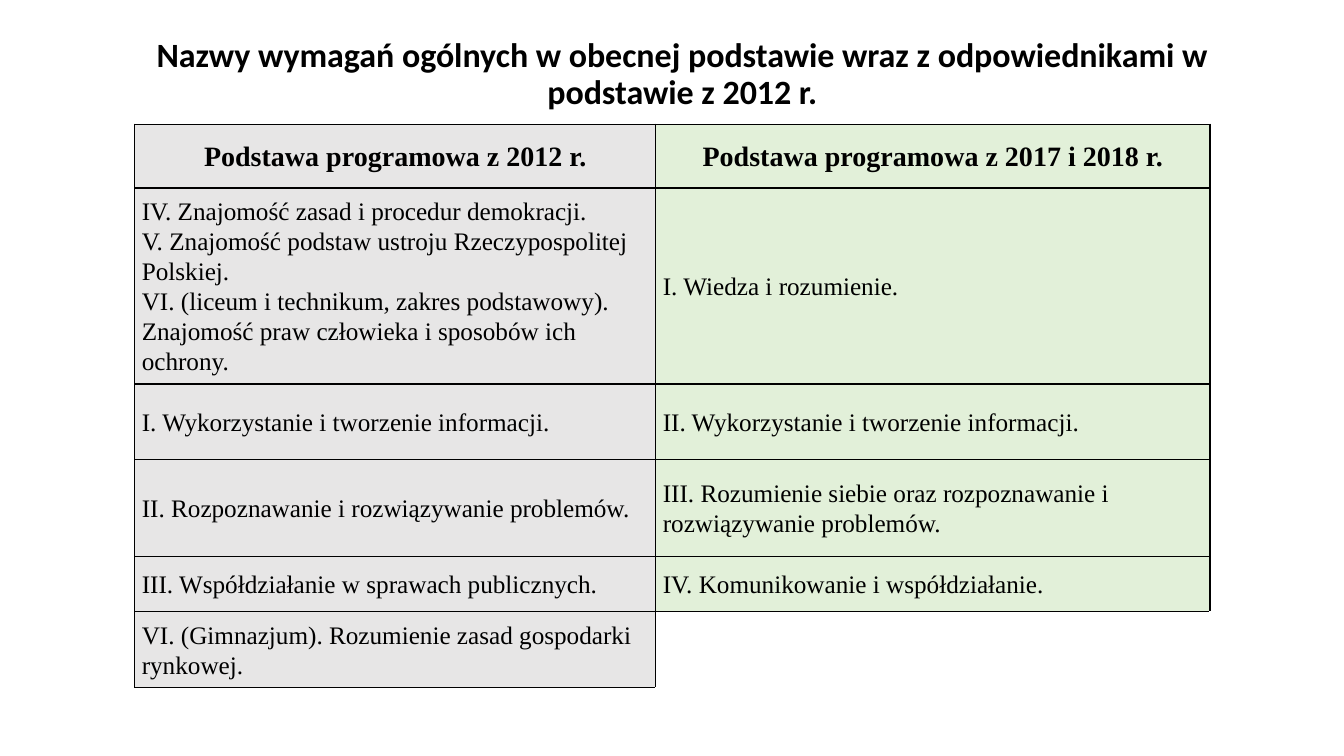
"""Build a slide comparing general requirements in two versions of a curriculum."""
from lxml import etree
from pptx import Presentation
from pptx.dml.color import RGBColor
from pptx.enum import text
from pptx.oxml import ns
from pptx.util import Pt

BLACK = RGBColor(0, 0, 0)
GREY = RGBColor(0xE7, 0xE6, 0xE6)
GREEN = RGBColor(0xE2, 0xF0, 0xD9)

TITLE = ("Nazwy wymagań ogólnych w obecnej podstawie wraz z odpowiednikami "
         "w podstawie z 2012 r.")
COLUMN_WIDTHS = (372.2, 395.8)
ROWS = (
    (45.5, "Podstawa programowa z 2012 r.", "Podstawa programowa z 2017 i 2018 r."),
    (140, "IV. Znajomość zasad i procedur demokracji.\n"
          "V. Znajomość podstaw ustroju Rzeczypospolitej Polskiej.\n"
          "VI. (liceum i technikum, zakres podstawowy). "
          "Znajomość praw człowieka i sposobów ich ochrony.",
     "I. Wiedza i rozumienie."),
    (54, "I. Wykorzystanie i tworzenie informacji.",
     "II. Wykorzystanie i tworzenie informacji."),
    (69.5, "II. Rozpoznawanie i rozwiązywanie problemów.",
     "III. Rozumienie siebie oraz rozpoznawanie i rozwiązywanie problemów."),
    (39.3, "III. Współdziałanie w sprawach publicznych.",
     "IV. Komunikowanie i współdziałanie."),
    (54, "VI. (Gimnazjum). Rozumienie zasad gospodarki rynkowej.", ""),
)


def format_text(frame, font_name, size, bold, spacing, alignment):
    for para in frame.paragraphs:
        para.alignment = alignment
        para.line_spacing = spacing
        for span in para.runs:
            span.font.name = font_name
            span.font.size = Pt(size)
            span.font.bold = bold
            span.font.color.rgb = BLACK


def add_borders(cell, sides):
    properties = cell._tc.get_or_add_tcPr()
    for position, side in enumerate(sides):
        line = etree.Element(ns.qn(f"a:ln{side}"), w=str(Pt(1)))
        fill = etree.SubElement(line, ns.qn("a:solidFill"))
        etree.SubElement(fill, ns.qn("a:srgbClr"), val=str(BLACK))
        properties.insert(position, line)


deck = Presentation()
deck.slide_width, deck.slide_height = Pt(960), Pt(540)
page = deck.slides.add_slide(deck.slide_layouts[5])

title = page.shapes.title
title.left, title.top, title.width, title.height = Pt(73.4), Pt(23.5), Pt(828), Pt(60)
title.text_frame.text = TITLE
title.text_frame.word_wrap = True
title.text_frame.auto_size = text.MSO_AUTO_SIZE.NONE
title.text_frame.vertical_anchor = text.MSO_ANCHOR.MIDDLE
format_text(title.text_frame, "Calibri", 24.3, True, 0.9, text.PP_ALIGN.CENTER)

table = page.shapes.add_table(len(ROWS), 2, Pt(96.3), Pt(88.8), Pt(768), Pt(402.3)).table
table.horz_banding = False
for column, width in zip(table.columns, COLUMN_WIDTHS):
    column.width = Pt(width)

for row_index, (height, *wordings) in enumerate(ROWS):
    table.rows[row_index].height = Pt(height)
    header = row_index == 0
    for column_index, wording in enumerate(wordings):
        cell = table.cell(row_index, column_index)
        cell.margin_left = cell.margin_right = Pt(5)
        cell.margin_top = cell.margin_bottom = 0
        cell.vertical_anchor = text.MSO_ANCHOR.MIDDLE
        if wording:
            cell.text_frame.text = wording
            format_text(cell.text_frame, "Times New Roman", 20 if header else 18, header,
                        1.07, text.PP_ALIGN.CENTER if header else text.PP_ALIGN.LEFT)
            cell.fill.solid()
            cell.fill.fore_color.rgb = (GREY, GREEN)[column_index]
        else:
            cell.fill.background()
        add_borders(cell, "LRTB" if wording else "LT")

deck.save("out.pptx")
